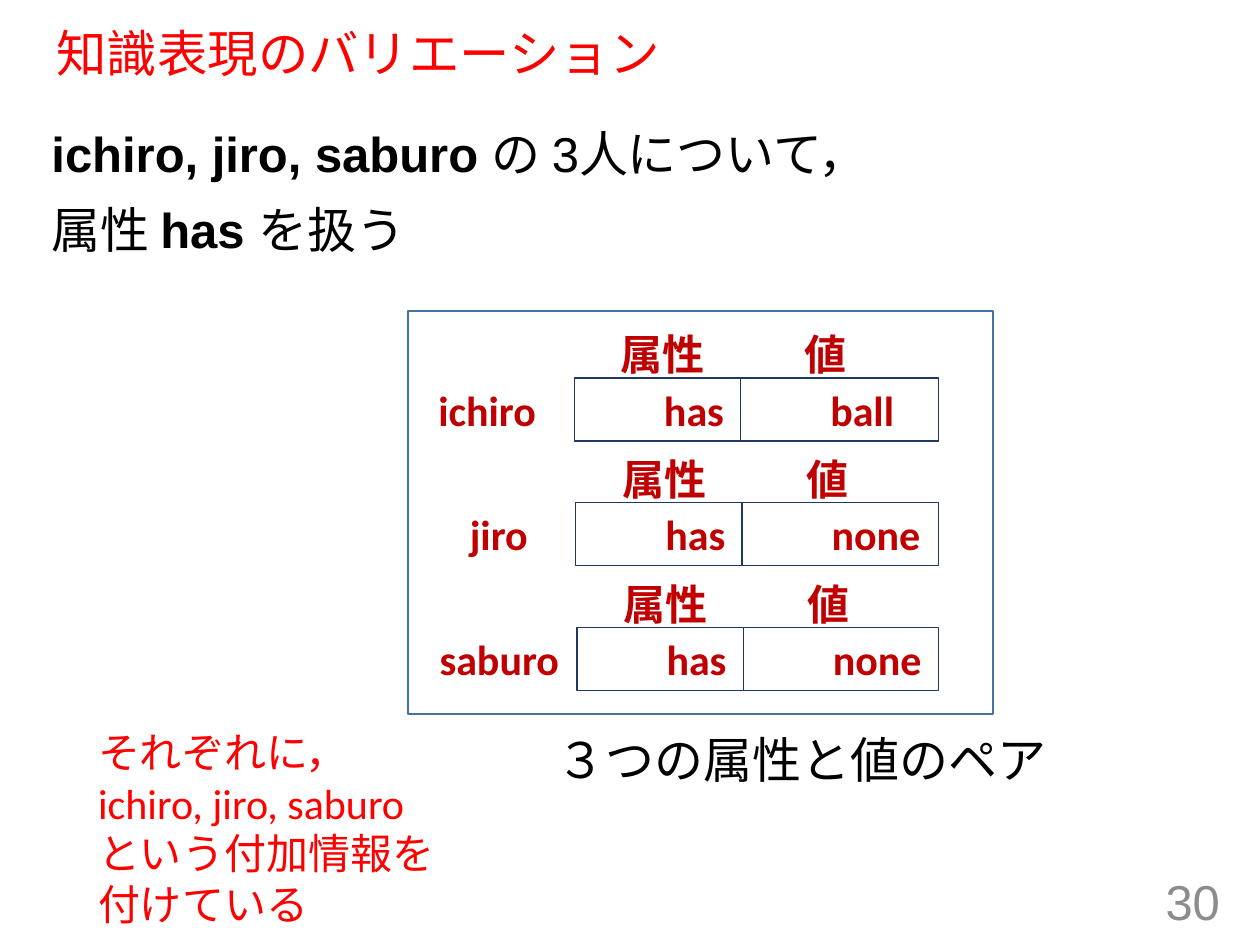
"""Build the slide on attribute and value pairs for three people."""
from pptx import Presentation
from pptx.dml.color import RGBColor
from pptx.enum.shapes import MSO_SHAPE
from pptx.enum.text import MSO_ANCHOR, PP_ALIGN
from pptx.util import Inches, Pt

COLORS = {"red": "FF0000", "dark_red": "C00000", "black": "000000",
          "gray": "8C8C8C", "navy": "203864", "blue": "43739E"}
TITLE = {"size": 28.8, "name": "Arial", "color": "red"}
BODY = {"size": 28, "name": "Arial", "color": "black"}
NUMBER = {"size": 28, "name": "Arial", "color": "gray"}
NOTE = {"size": 24, "name": "Calibri", "color": "red"}
LABEL = {"size": 24, "name": "Calibri", "color": "dark_red", "bold": True}

TEXTS = [
    ((0.35, 0.19, 9.25, 0.51), TITLE, [[("知識表現のバリエーション", False)]],
     {"anchor": MSO_ANCHOR.MIDDLE, "line_spacing": 0.9}),
    ((0.31, 0.93, 9.25, 5.83), BODY,
     [[("ichiro, jiro, saburo ", True), ("の 3人について，", False)],
      [("属性 ", False), ("has ", True), ("を扱う", False)]],
     {"space_before": Pt(10)}),
    ((7.53, 6.95, 2.25, 0.4), NUMBER, [[("30", False)]],
     {"anchor": MSO_ANCHOR.MIDDLE, "alignment": PP_ALIGN.RIGHT}),
    ((0.68, 5.72, 2.93, 1.72), NOTE,
     [[("それぞれに，", False)],
      [("ichiro, jiro, saburo という付加情報を付けている", False)]], {}),
    ((4.32, 5.79, 5.01, 0.55), BODY, [[("３つの属性と値のペア", False)]],
     {"line_spacing": 0.9}),
]
FRAME = (3.24, 2.47, 4.64, 3.2)
PEOPLE = [("ichiro", 3.38, "has", "ball"), ("jiro", 3.63, "has", "none"),
          ("saburo", 3.39, "has", "none")]
FIRST_ROW, ROW_PITCH, ROW_SHIFT, ROW_HEIGHT = 3.0, 0.99, 0.01, 0.5
ATTRIBUTE_LEFT, ATTRIBUTE_WIDTH, VALUE_RIGHT = 4.56, 1.32, 7.45
HEADINGS = [("属性", 0.27, 0.88), ("値", 1.73, 0.58)]
HEADING_RISE, CELL_INSET = 0.44, 0.71


def add_text(shape, paragraphs, style, anchor=MSO_ANCHOR.TOP, inset=0.1, **layout):
    frame = shape.text_frame
    frame.word_wrap = True
    frame.vertical_anchor = anchor
    frame.margin_left = Inches(inset)
    for index, runs in enumerate(paragraphs):
        paragraph = frame.paragraphs[0] if index == 0 else frame.add_paragraph()
        settings = {"alignment": PP_ALIGN.LEFT, **layout}
        if index == 0:
            settings.pop("space_before", None)
        for key, value in settings.items():
            setattr(paragraph, key, value)
        for text, bold in runs:
            run = paragraph.add_run()
            run.text = text
            font = {"size": Pt(style["size"]), "name": style["name"],
                    "bold": bold or style.get("bold", False)}
            for key, value in font.items():
                setattr(run.font, key, value)
            run.font.color.rgb = RGBColor.from_string(COLORS[style["color"]])


def add_box(slide, place, paragraphs, style, **layout):
    shape = slide.shapes.add_textbox(*map(Inches, place))
    add_text(shape, paragraphs, style, **layout)


def add_rectangle(slide, place, color, width):
    shape = slide.shapes.add_shape(MSO_SHAPE.RECTANGLE, *map(Inches, place))
    shape.shadow.inherit = False
    shape.fill.background()
    shape.line.color.rgb = RGBColor.from_string(COLORS[color])
    shape.line.width = Pt(width)
    return shape


def add_person(slide, row, name, name_left, attribute, value):
    top = FIRST_ROW + row * ROW_PITCH
    left = ATTRIBUTE_LEFT + row * ROW_SHIFT
    value_left = left + ATTRIBUTE_WIDTH
    cells = [(attribute, left, ATTRIBUTE_WIDTH),
             (value, value_left, VALUE_RIGHT - value_left)]
    for text, cell_left, width in cells:
        cell = add_rectangle(slide, (cell_left, top, width, ROW_HEIGHT), "navy", 0.75)
        add_text(cell, [[(text, True)]], LABEL, inset=CELL_INSET)
    for text, offset, width in HEADINGS:
        place = (left + offset, top - HEADING_RISE, width, ROW_HEIGHT)
        add_box(slide, place, [[(text, True)]], LABEL)
    add_box(slide, (name_left, top, ATTRIBUTE_WIDTH, ROW_HEIGHT), [[(name, True)]], LABEL)


def main():
    presentation = Presentation()
    presentation.slide_width = Inches(10)
    presentation.slide_height = Inches(7.5)
    slide = presentation.slides.add_slide(presentation.slide_layouts[6])
    for place, style, paragraphs, layout in TEXTS:
        add_box(slide, place, paragraphs, style, **layout)
    add_rectangle(slide, FRAME, "blue", 1)
    for row, person in enumerate(PEOPLE):
        add_person(slide, row, *person)
    presentation.save("out.pptx")


if __name__ == "__main__":
    main()
